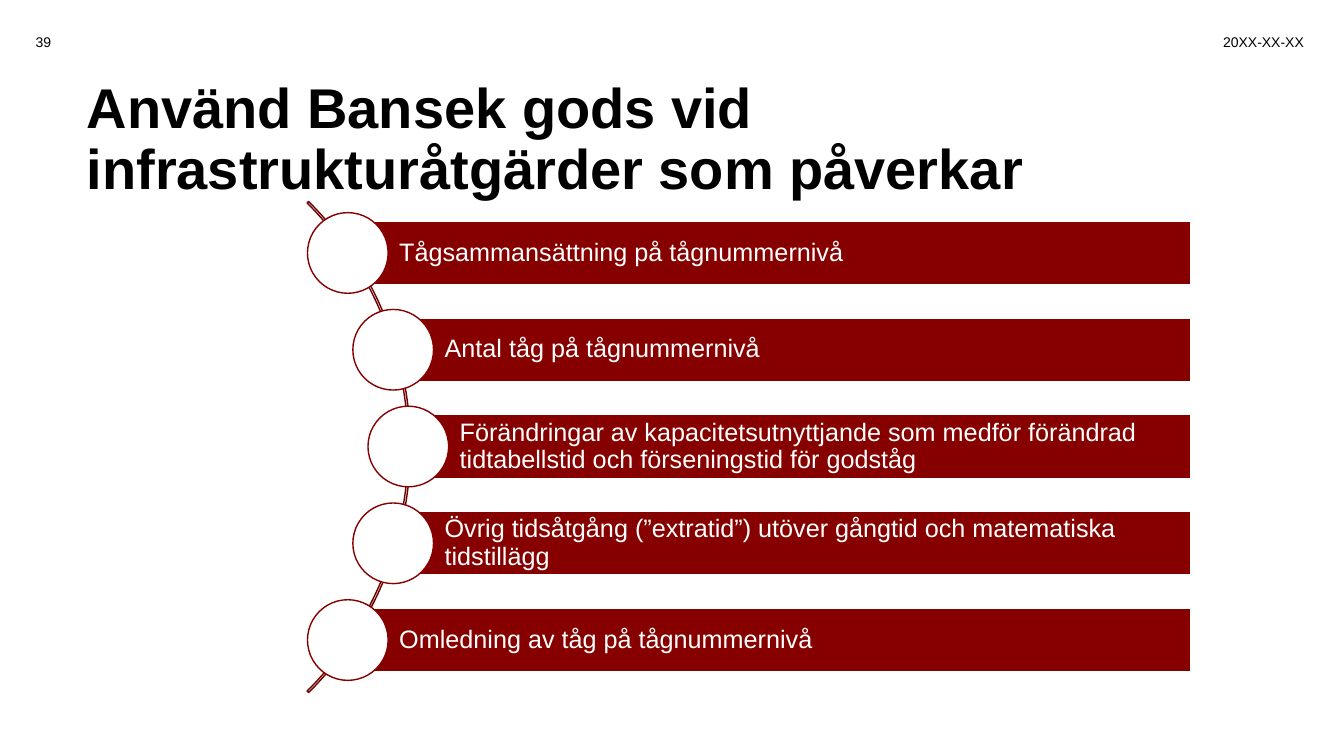
"""Build the slide about when to use Bansek gods."""
from dataclasses import dataclass

from pptx import Presentation
from pptx.dml.color import RGBColor
from pptx.enum.shapes import MSO_SHAPE as Preset
from pptx.enum.text import MSO_ANCHOR as Anchor, MSO_AUTO_SIZE as AutoSize, PP_ALIGN as Align
from pptx.shapes.autoshape import Shape
from pptx.slide import Slide
from pptx.util import Inches, Pt

BLACK = RGBColor(0x00, 0x00, 0x00)
WHITE = RGBColor(0xFF, 0xFF, 0xFF)
RED = RGBColor(0x87, 0x00, 0x00)
DARK_RED = RGBColor(0x6C, 0x00, 0x00)

RIGHT_EDGE = 11.81
FIRST_CENTRE = 2.51
PITCH = 0.96
BAR_HEIGHT = 0.64
CIRCLE_SIZE = 0.8


@dataclass(frozen=True)
class Measure:
    """A bar's text and its left edge in inches."""

    text: str
    left: float


MEASURES = [
    Measure("Tågsammansättning på tågnummernivå", 3.45),
    Measure("Antal tåg på tågnummernivå", 3.9),
    Measure("Förändringar av kapacitetsutnyttjande som medför förändrad "
            "tidtabellstid och förseningstid för godståg", 4.05),
    Measure("Övrig tidsåtgång (”extratid”) utöver gångtid och matematiska tidstillägg", 3.9),
    Measure("Omledning av tåg på tågnummernivå", 3.45),
]


def write(shape: Shape, text: str, *, size: float, color: RGBColor = BLACK, bold: bool = False,
          align: Align = Align.LEFT, spacing: float = 1.0, inset: float = 0.1) -> None:
    """Write one formatted, vertically centred paragraph into a shape."""
    frame = shape.text_frame
    frame.word_wrap = True
    frame.auto_size = AutoSize.NONE
    frame.vertical_anchor = Anchor.MIDDLE
    frame.margin_left = Inches(inset)
    frame.margin_right = Inches(0.1 if inset == 0.1 else 0.05)
    frame.margin_top = frame.margin_bottom = Inches(0.05)
    paragraph = frame.paragraphs[0]
    paragraph.alignment = align
    paragraph.line_spacing = spacing
    run = paragraph.add_run()
    run.text = text
    run.font.name = "Arial"
    run.font.size = Pt(size)
    run.font.bold = bold
    run.font.color.rgb = color


def add_preset(slide: Slide, preset: Preset, left: float, top: float, width: float, height: float,
               *, fill: RGBColor | None, line: RGBColor, weight: float) -> Shape:
    """Add a preset shape without shadow, measured in inches."""
    shape = slide.shapes.add_shape(preset, Inches(left), Inches(top), Inches(width), Inches(height))
    shape.shadow.inherit = False
    if fill is None:
        shape.fill.background()
    else:
        shape.fill.solid()
        shape.fill.fore_color.rgb = fill
    shape.line.color.rgb = line
    shape.line.width = Pt(weight)
    return shape


def add_header(slide: Slide, text: str, left: float, width: float, align: Align) -> None:
    """Add a small text in the top margin."""
    header = slide.shapes.add_textbox(Inches(left), Inches(0.22), Inches(width), Inches(0.4))
    write(header, text, size=10, align=align)


def add_title(slide: Slide, text: str) -> None:
    """Place and write the title."""
    title = slide.shapes.title
    title.left, title.top = Inches(0.76), Inches(0.91)
    title.width, title.height = Inches(11.81), Inches(0.98)
    write(title, text, size=40, bold=True, spacing=0.9)


def add_arc(slide: Slide) -> None:
    """Add the thin arc that links the circles."""
    arc = add_preset(slide, Preset.BLOCK_ARC, -2.82, 0.99, 6.89, 6.89,
                     fill=None, line=DARK_RED, weight=1)
    for index, value in enumerate((189, 27, 0.003)):
        arc.adjustments[index] = value


def add_measure(slide: Slide, measure: Measure, centre: float) -> None:
    """Add a bar with its text and the circle centred on its left edge."""
    bar = add_preset(slide, Preset.RECTANGLE, measure.left, centre - BAR_HEIGHT / 2,
                     RIGHT_EDGE - measure.left, BAR_HEIGHT, fill=RED, line=WHITE, weight=1.5)
    write(bar, measure.text, size=18, color=WHITE, spacing=0.9, inset=0.51)
    radius = CIRCLE_SIZE / 2
    add_preset(slide, Preset.OVAL, measure.left - radius, centre - radius,
               CIRCLE_SIZE, CIRCLE_SIZE, fill=WHITE, line=RED, weight=1)


def main() -> None:
    """Build and save the presentation."""
    deck = Presentation()
    deck.slide_width, deck.slide_height = Inches(13.33), Inches(7.5)
    slide = deck.slides.add_slide(deck.slide_layouts[5])
    add_title(slide, "Använd Bansek gods vid infrastrukturåtgärder som påverkar")
    add_header(slide, "20XX-XX-XX", 11.1, 1.93, Align.RIGHT)
    add_header(slide, "39", 0, 0.86, Align.CENTER)
    add_arc(slide)
    for row, measure in enumerate(MEASURES):
        add_measure(slide, measure, FIRST_CENTRE + row * PITCH)
    deck.save("out.pptx")


if __name__ == "__main__":
    main()
